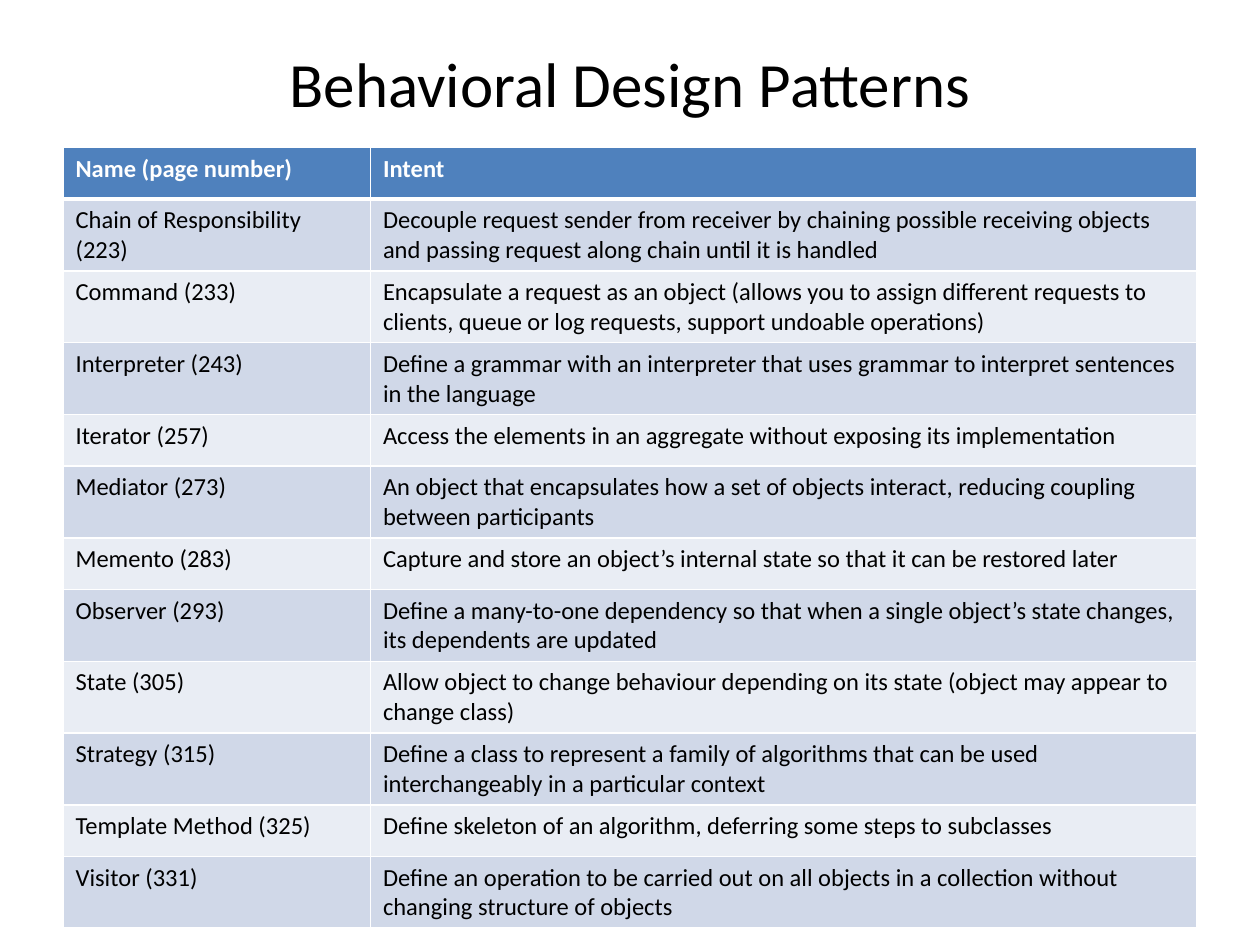
from pptx import Presentation
from pptx.dml.color import RGBColor as RGB
from pptx.enum.text import MSO_ANCHOR as Anchor, PP_ALIGN as Align
from pptx.oxml import parse_xml
from pptx.oxml.ns import nsdecls
from pptx.util import Inches, Pt

THEME = {
    "font": "Calibri",
    "title_size": Pt(36),
    "table_size": Pt(14),
    "text": RGB.from_string("000000"),
    "header_text": RGB.from_string("FFFFFF"),
    "header_fill": RGB.from_string("4F81BD"),
    "bands": [RGB.from_string("E9EDF4"), RGB.from_string("D0D8E8")],
    "border": "FFFFFF",
}
MARGIN, CONTENT_WIDTH = Inches(0.5), Inches(9)
COLUMN_WIDTHS = [Inches(2.44), Inches(6.56)]
ONE_LINE, TWO_LINES = Inches(0.41), Inches(0.57)
CHARS_PER_LINE = 80

PATTERNS = [
    ("Name (page number)", "Intent"),
    ("Chain of Responsibility (223)",
     "Decouple request sender from receiver by chaining possible receiving objects "
     "and passing request along chain until it is handled"),
    ("Command (233)",
     "Encapsulate a request as an object (allows you to assign different requests to "
     "clients, queue or log requests, support undoable operations)"),
    ("Interpreter (243)",
     "Define a grammar with an interpreter that uses grammar to interpret sentences "
     "in the language"),
    ("Iterator (257)",
     "Access the elements in an aggregate without exposing its implementation"),
    ("Mediator (273)",
     "An object that encapsulates how a set of objects interact, reducing coupling "
     "between participants"),
    ("Memento (283)",
     "Capture and store an object’s internal state so that it can be restored later"),
    ("Observer (293)",
     "Define a many-to-one dependency so that when a single object’s state changes, "
     "its dependents are updated"),
    ("State (305)",
     "Allow object to change behaviour depending on its state (object may appear to "
     "change class)"),
    ("Strategy (315)",
     "Define a class to represent a family of algorithms that can be used "
     "interchangeably in a particular context"),
    ("Template Method (325)",
     "Define skeleton of an algorithm, deferring some steps to subclasses"),
    ("Visitor (331)",
     "Define an operation to be carried out on all objects in a collection without "
     "changing structure of objects"),
]


def style_text(paragraph, size, color, bold=False):
    font = paragraph.font
    font.name, font.size, font.bold = THEME["font"], size, bold
    font.color.rgb = color


def add_borders(cell, top, bottom):
    """Outline a cell, with top and bottom widths in points and 1 pt sides."""
    properties = cell._tc.get_or_add_tcPr()
    for side, width in (("L", 1), ("R", 1), ("T", top), ("B", bottom)):
        properties.append(parse_xml(
            f'<a:ln{side} {nsdecls("a")} w="{Pt(width)}"><a:solidFill>'
            f'<a:srgbClr val="{THEME["border"]}"/></a:solidFill></a:ln{side}>'))


prs = Presentation()
prs.slide_width, prs.slide_height = Inches(10), Inches(7.5)
slide = prs.slides.add_slide(prs.slide_layouts[6])

title = slide.shapes.add_textbox(MARGIN, Inches(0.3), CONTENT_WIDTH, Inches(0.71)).text_frame
title.word_wrap = True
title.vertical_anchor = Anchor.MIDDLE
title.text = "Behavioral Design Patterns"
title.paragraphs[0].alignment = Align.CENTER
style_text(title.paragraphs[0], THEME["title_size"], THEME["text"])

heights = [TWO_LINES if len(intent) > CHARS_PER_LINE else ONE_LINE for _, intent in PATTERNS]
table = slide.shapes.add_table(len(PATTERNS), len(COLUMN_WIDTHS), MARGIN, Inches(1.17),
                               CONTENT_WIDTH, sum(heights)).table
for column, width in zip(table.columns, COLUMN_WIDTHS):
    column.width = width

for r, (pattern, height) in enumerate(zip(PATTERNS, heights)):
    table.rows[r].height = height
    is_header = r == 0
    for c, wording in enumerate(pattern):
        cell = table.cell(r, c)
        cell.text = wording
        style_text(cell.text_frame.paragraphs[0], THEME["table_size"],
                   THEME["header_text"] if is_header else THEME["text"], is_header)
        add_borders(cell, top=3 if r == 1 else 1, bottom=3 if is_header else 1)
        cell.fill.solid()
        cell.fill.fore_color.rgb = THEME["header_fill"] if is_header else THEME["bands"][r % 2]

prs.save("out.pptx")
